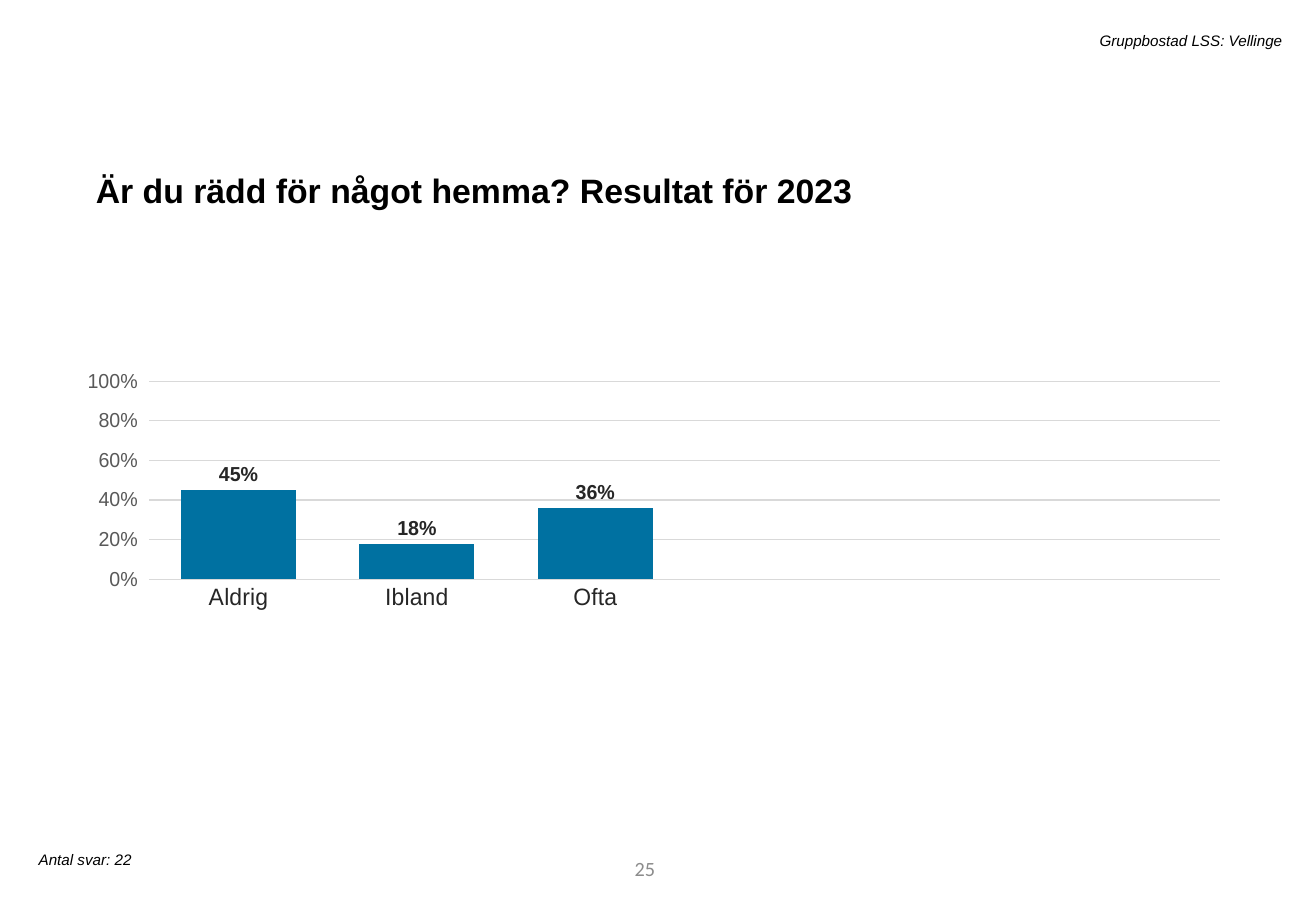
from lxml import etree
from pptx import Presentation
from pptx import util as u
from pptx.chart import data
from pptx.dml.color import RGBColor
from pptx.enum import chart as c
from pptx.enum import text as t

BLACK = RGBColor(0x00, 0x00, 0x00)
DARK = RGBColor(0x26, 0x26, 0x26)
AXIS_GREY = RGBColor(0x59, 0x59, 0x59)
PAGE_GREY = RGBColor(0x8C, 0x8C, 0x8C)
GRID_GREY = RGBColor(0xD9, 0xD9, 0xD9)
BAR_BLUE = RGBColor(0x00, 0x71, 0xA1)

TITLE = {"size": u.Pt(20), "bold": True}
NOTE = {"size": u.Pt(9), "italic": True}
PAGE = {"size": u.Pt(12), "name": "Calibri"}

ANSWERS = {"Aldrig": 0.45, "Ibland": 0.18, "Ofta": 0.36}
EMPTY_SLOTS = 3
PLOT_LAYOUT = {"x": 0.025, "y": 0.154, "w": 0.966, "h": 0.413}


def set_values(target, values):
    for name, value in values.items():
        setattr(target, name, value)


def set_font(font, values, color=BLACK):
    set_values(font, {"name": "Arial", **values})
    font.color.rgb = color


def add_text(slide, box, words, font, color=BLACK, frame=None, paragraph_format=None):
    shape = slide.shapes.add_textbox(*map(u.Inches, box))
    set_values(shape.text_frame, {"word_wrap": True, **(frame or {})})
    paragraph = shape.text_frame.paragraphs[0]
    set_values(paragraph, paragraph_format or {})
    run = paragraph.add_run()
    run.text = words
    set_font(run.font, font, color)


def place_plot(chart):
    plot_area = chart.plots[0]._element.getparent()
    namespace = etree.QName(plot_area).namespace
    for old in plot_area.findall(f"{{{namespace}}}layout"):
        plot_area.remove(old)
    layout = etree.Element(f"{{{namespace}}}layout")
    manual = etree.SubElement(layout, f"{{{namespace}}}manualLayout")
    settings = {"layoutTarget": "inner", "xMode": "edge", "yMode": "edge", **PLOT_LAYOUT}
    for name, value in settings.items():
        etree.SubElement(manual, f"{{{namespace}}}{name}", val=str(value))
    plot_area.insert(0, layout)


def style_axes(chart):
    answers, shares = chart.category_axis, chart.value_axis
    set_values(answers, {"major_tick_mark": c.XL_TICK_MARK.NONE,
                         "minor_tick_mark": c.XL_TICK_MARK.NONE,
                         "has_major_gridlines": False})
    set_values(shares, {"minimum_scale": 0, "maximum_scale": 1, "major_unit": 0.2,
                        "major_tick_mark": c.XL_TICK_MARK.OUTSIDE,
                        "has_major_gridlines": True})
    set_font(answers.tick_labels.font, {"size": u.Pt(14)}, DARK)
    set_font(shares.tick_labels.font, {"size": u.Pt(12)}, AXIS_GREY)
    set_values(shares.tick_labels, {"number_format": "0%", "number_format_is_linked": False})
    shares.format.line.fill.background()
    for line in (answers.format.line, shares.major_gridlines.format.line):
        line.color.rgb = GRID_GREY
        line.width = u.Pt(0.75)


def add_answer_chart(slide, box):
    chart_data = data.CategoryChartData(number_format="0%")
    chart_data.categories = [*ANSWERS, *[""] * EMPTY_SLOTS]
    chart_data.add_series("Series 1", [*ANSWERS.values(), *[None] * EMPTY_SLOTS])
    chart = slide.shapes.add_chart(
        c.XL_CHART_TYPE.COLUMN_CLUSTERED, *map(u.Inches, box), chart_data).chart
    set_values(chart, {"has_legend": False, "has_title": False})
    set_font(chart.font, {"size": u.Pt(10)})
    plot = chart.plots[0]
    set_values(plot, {"gap_width": 55, "vary_by_categories": False})
    series = plot.series[0]
    series.format.fill.solid()
    series.format.fill.fore_color.rgb = BAR_BLUE
    labels = series.data_labels
    set_values(labels, {"show_value": True, "number_format": "0%",
                        "number_format_is_linked": False,
                        "position": c.XL_LABEL_POSITION.OUTSIDE_END})
    set_font(labels.font, {"size": u.Pt(12), "bold": True}, DARK)
    style_axes(chart)
    place_plot(chart)


def add_footer(slide, box):
    left, top, width, height = box
    add_text(slide, (left, top, 2.84, 0.25), "Antal svar: 22", NOTE,
             frame={"word_wrap": False})
    add_text(slide, (left + 2.83, top, width - 2.83, height), "25", PAGE, PAGE_GREY,
             {"vertical_anchor": t.MSO_ANCHOR.MIDDLE}, {"alignment": t.PP_ALIGN.RIGHT})


def build_result_slide(presentation):
    slide = presentation.slides.add_slide(presentation.slide_layouts[6])
    add_text(slide, (1.79, 0.21, 8.86, 0.25), "Gruppbostad LSS: Vellinge", NOTE,
             paragraph_format={"alignment": t.PP_ALIGN.RIGHT})
    add_text(slide, (0.69, 1.28, 9.4, 0.47),
             "Är du rädd för något hemma? Resultat för 2023", TITLE,
             paragraph_format={"line_spacing": 1.2, "space_before": u.Pt(10)})
    add_answer_chart(slide, (0.72, 2.53, 9.4, 3.95))
    add_footer(slide, (0.22, 6.95, 5.27, 0.4))


def main():
    presentation = Presentation()
    set_values(presentation, {"slide_width": u.Inches(10.83), "slide_height": u.Inches(7.5)})
    build_result_slide(presentation)
    presentation.save("out.pptx")


if __name__ == "__main__":
    main()
